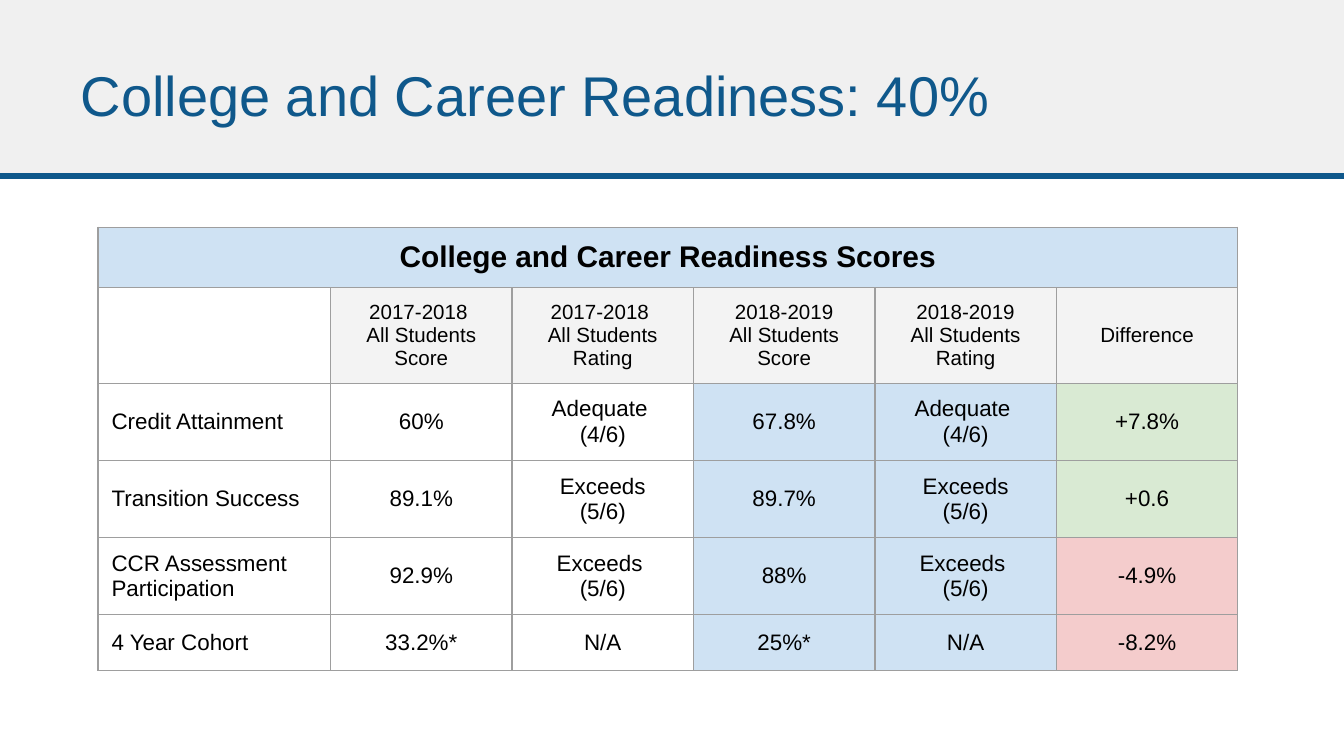
from lxml.etree import SubElement
from pptx import Presentation
from pptx.dml.color import RGBColor
from pptx.enum.shapes import MSO_CONNECTOR, MSO_SHAPE
from pptx.enum.text import MSO_ANCHOR, MSO_AUTO_SIZE, PP_ALIGN
from pptx.oxml.ns import qn
from pptx.util import Inches, Pt

# Content
TITLE = "College and Career Readiness: 40%"
CAPTION = "College and Career Readiness Scores"
HEADINGS = [
    "",
    "2017-2018 \nAll Students Score",
    "2017-2018 \nAll Students Rating",
    "2018-2019\nAll Students Score",
    "2018-2019\nAll Students Rating",
    "Difference",
]
SCORES = [
    ["Credit Attainment", "60%", "Adequate \n(4/6)", "67.8%", "Adequate \n(4/6)", "+7.8%"],
    ["Transition Success", "89.1%", "Exceeds\n(5/6)", "89.7%", "Exceeds\n(5/6)", "+0.6"],
    ["CCR Assessment Participation", "92.9%", "Exceeds \n(5/6)", "88%", "Exceeds \n(5/6)", "-4.9%"],
    ["4 Year Cohort", "33.2%*", "N/A", "25%*", "N/A", "-8.2%"],
]

# Look and layout, in inches
COLORS = {
    "band": "F0F0F0", "accent": "0F588B", "text": "000000", "border": "9E9E9E",
    "current": "CFE2F3", "heading": "F3F3F3", "gain": "D9EAD3", "loss": "F4CCCC",
}
FONT = "Arial"
WIDTH = 10
HEIGHT = WIDTH * 9 / 16
BAND_HEIGHT = 1.31
TABLE_LEFT, TABLE_TOP = 0.73, 1.69
COLUMNS = [1.73] + [1.35] * 5
ROWS = [0.45, 0.71] + [0.57] * 3 + [0.42]
CURRENT_YEAR, DIFFERENCE = (3, 4), 5


def color(name):
    return RGBColor.from_string(COLORS[name])


def set_font(paragraph, size, color_name, bold=False):
    font = paragraph.font
    font.name, font.size, font.bold = FONT, Pt(size), bold
    font.color.rgb = color(color_name)


def set_insets(frame):
    frame.margin_left = frame.margin_right = Inches(0.1)
    frame.margin_top = frame.margin_bottom = Inches(0.1)


def add_borders(cell):
    properties = cell._tc.get_or_add_tcPr()
    for position, side in enumerate(("lnL", "lnR", "lnT", "lnB")):
        line = SubElement(properties, qn(f"a:{side}"), w=str(Pt(0.75)))
        fill = SubElement(line, qn("a:solidFill"))
        SubElement(fill, qn("a:srgbClr"), val=COLORS["border"])
        properties.insert(position, line)


def fill_name(row, column, text):
    if row == 0:
        return "current"
    if row == 1:
        return "heading" if text else None
    if column == DIFFERENCE:
        return "gain" if text.startswith("+") else "loss"
    return "current" if column in CURRENT_YEAR else None


prs = Presentation()
prs.slide_width, prs.slide_height = Inches(WIDTH), Inches(HEIGHT)
slide = prs.slides.add_slide(prs.slide_layouts[5])
shapes = slide.shapes

# Header band and rule, behind the title
band = shapes.add_shape(MSO_SHAPE.RECTANGLE, 0, 0, Inches(WIDTH), Inches(BAND_HEIGHT))
band.shadow.inherit = False
band.fill.solid()
band.fill.fore_color.rgb = color("band")
band.line.fill.background()
rule = shapes.add_connector(
    MSO_CONNECTOR.STRAIGHT, 0, Inches(BAND_HEIGHT), Inches(WIDTH), Inches(BAND_HEIGHT))
rule.line.color.rgb = color("accent")
rule.line.width = Pt(3)
SubElement(rule._element.spPr, qn("a:effectLst"))

# Title
title = shapes.title
title.left, title.top = Inches(0.5), Inches(0.23)
title.width, title.height = Inches(7.67), Inches(0.94)
heading = title.text_frame
heading.text = TITLE
heading.auto_size = MSO_AUTO_SIZE.NONE
heading.vertical_anchor = MSO_ANCHOR.MIDDLE
set_insets(heading)
heading.paragraphs[0].alignment = PP_ALIGN.LEFT
set_font(heading.paragraphs[0], 30, "accent")
rule._element.addnext(title._element)

# Score table
table = shapes.add_table(
    len(ROWS), len(COLUMNS), Inches(TABLE_LEFT), Inches(TABLE_TOP),
    Inches(sum(COLUMNS)), Inches(sum(ROWS))).table
table.first_row = table.horz_banding = False
for column, width in zip(table.columns, COLUMNS):
    column.width = Inches(width)
for row, height in zip(table.rows, ROWS):
    row.height = Inches(height)

caption_row = [CAPTION] + [""] * (len(COLUMNS) - 1)
for r, texts in enumerate([caption_row, HEADINGS] + SCORES):
    size = {0: 16, 1: 11}.get(r, 12)
    for c, text in enumerate(texts):
        cell = table.cell(r, c)
        set_insets(cell)
        cell.vertical_anchor = MSO_ANCHOR.MIDDLE
        paragraph = cell.text_frame.paragraphs[0]
        paragraph.text = text
        paragraph.alignment = PP_ALIGN.LEFT if r > 1 and c == 0 else PP_ALIGN.CENTER
        set_font(paragraph, size, "text", bold=r == 0)
        name = fill_name(r, c, text)
        if name:
            cell.fill.solid()
            cell.fill.fore_color.rgb = color(name)
        else:
            cell.fill.background()
        add_borders(cell)
table.cell(0, 0).merge(table.cell(0, len(COLUMNS) - 1))

prs.save("out.pptx")
